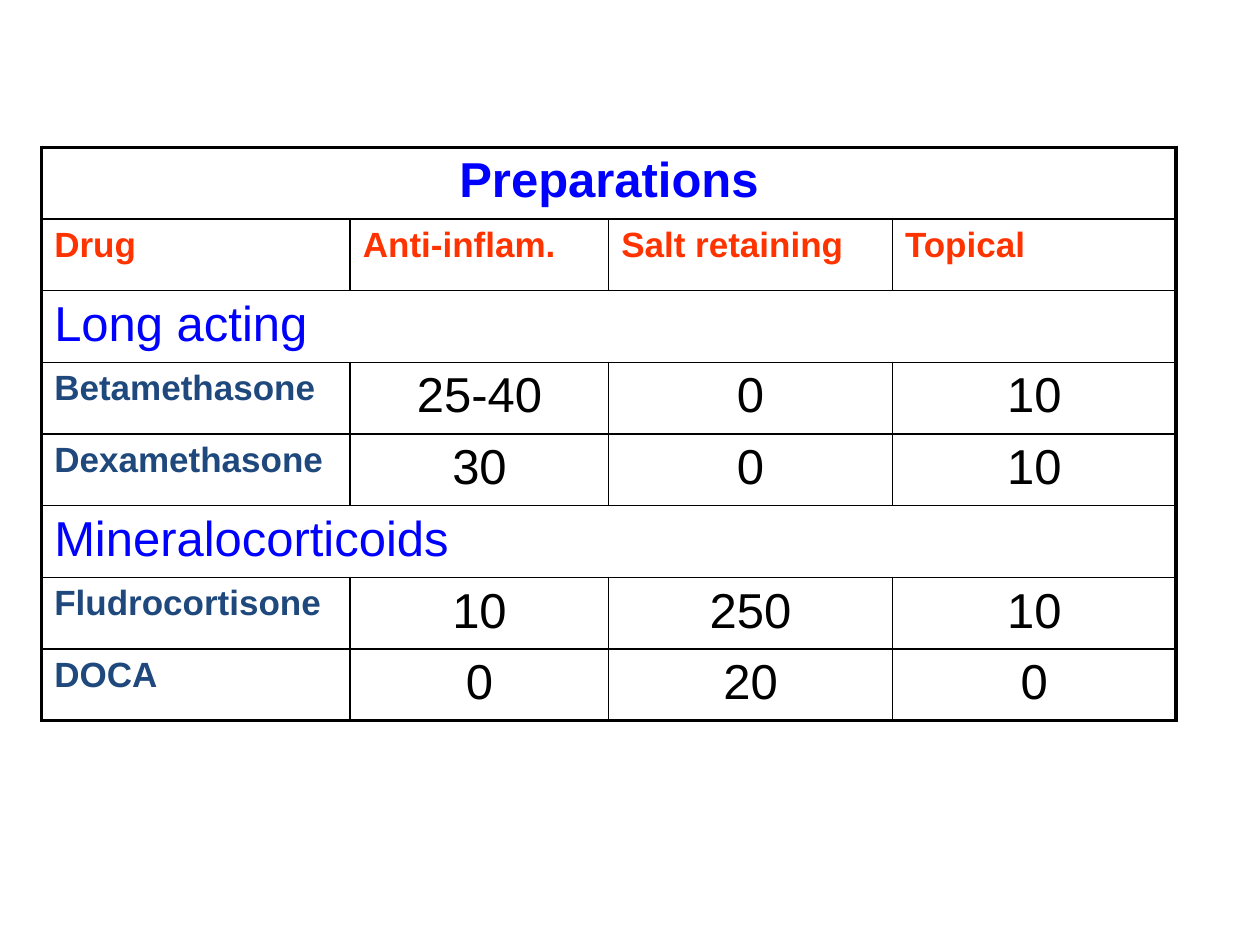
from dataclasses import dataclass

from lxml import etree
from pptx import Presentation
from pptx import util as u
from pptx.dml.color import RGBColor
from pptx.enum import text
from pptx.oxml import ns

FONT = "Arial"
BLACK = "000000"
BLUE = "0000FF"
INNER_LINE, OUTER_LINE = 1, 2.25
COLUMN_WIDTHS = (6.22, 5.21, 5.72, 5.72)
LEFT, CENTER = text.PP_ALIGN.LEFT, text.PP_ALIGN.CENTER


@dataclass(frozen=True)
class Style:
    size: int
    color: str
    bold: bool = False
    align: text.PP_ALIGN = LEFT


@dataclass(frozen=True)
class Row:
    texts: tuple[str, ...]
    first: Style
    rest: Style

    @property
    def merged(self) -> bool:
        return len(self.texts) == 1


TITLE = Style(28, BLUE, bold=True, align=CENTER)
HEADING = Style(20, "FF3300", bold=True)
SECTION = Style(28, BLUE)
DRUG = Style(20, "1F497D", bold=True)
VALUE = Style(28, BLACK, align=CENTER)

ROWS = (
    Row(("Preparations",), TITLE, TITLE),
    Row(("Drug", "Anti-inflam.", "Salt retaining", "Topical"), HEADING, HEADING),
    Row(("Long acting",), SECTION, SECTION),
    Row(("Betamethasone", "25-40", "0", "10"), DRUG, VALUE),
    Row(("Dexamethasone", "30", "0", "10"), DRUG, VALUE),
    Row(("Mineralocorticoids",), SECTION, SECTION),
    Row(("Fludrocortisone", "10", "250", "10"), DRUG, VALUE),
    Row(("DOCA", "0", "20", "0"), DRUG, VALUE),
)


def rgb(color: str) -> RGBColor:
    return RGBColor.from_string(color)


def write_cell(cell, content: str, style: Style) -> None:
    paragraph = cell.text_frame.paragraphs[0]
    paragraph.alignment = style.align
    # Space before is a share of the text size
    properties = paragraph._p.get_or_add_pPr()
    before = etree.SubElement(properties, ns.qn("a:spcBef"))
    etree.SubElement(before, ns.qn("a:spcPct"), val="20000")
    run = paragraph.add_run()
    run.text = content
    run.font.name = FONT
    run.font.size = u.Pt(style.size)
    run.font.bold = style.bold
    run.font.color.rgb = rgb(style.color)


def draw_borders(cell, outer_sides: dict[str, bool]) -> None:
    properties = cell._tc.get_or_add_tcPr()
    for side, is_outer in outer_sides.items():
        width = u.Pt(OUTER_LINE if is_outer else INNER_LINE)
        line = etree.SubElement(properties, ns.qn(f"a:ln{side}"), w=str(int(width)))
        fill = etree.SubElement(line, ns.qn("a:solidFill"))
        etree.SubElement(fill, ns.qn("a:srgbClr"), val=BLACK)


def fill_row(table, index: int, row: Row) -> None:
    last_row, last_column = len(ROWS) - 1, len(COLUMN_WIDTHS) - 1
    if row.merged:
        table.cell(index, 0).merge(table.cell(index, last_column))
    for column in range(len(COLUMN_WIDTHS)):
        cell = table.cell(index, column)
        draw_borders(cell, {
            "L": column == 0 or row.merged,
            "R": column == last_column or row.merged,
            "T": index == 0,
            "B": index == last_row,
        })
        cell.fill.background()
        if column < len(row.texts):
            write_cell(cell, row.texts[column], row.rest if column else row.first)


def main() -> None:
    presentation = Presentation()
    presentation.slide_width = u.Cm(25.4)
    presentation.slide_height = u.Cm(19.05)
    slide = presentation.slides.add_slide(presentation.slide_layouts[6])

    # Table of preparations
    frame = slide.shapes.add_table(
        len(ROWS), len(COLUMN_WIDTHS),
        u.Cm(0.84), u.Cm(2.97), u.Cm(sum(COLUMN_WIDTHS)), u.Cm(11.56),
    )
    table = frame.table
    table.first_row = False
    table.horz_banding = False
    for column, width in zip(table.columns, COLUMN_WIDTHS):
        column.width = u.Cm(width)
    for index, row in enumerate(ROWS):
        fill_row(table, index, row)

    presentation.save("out.pptx")


if __name__ == "__main__":
    main()
